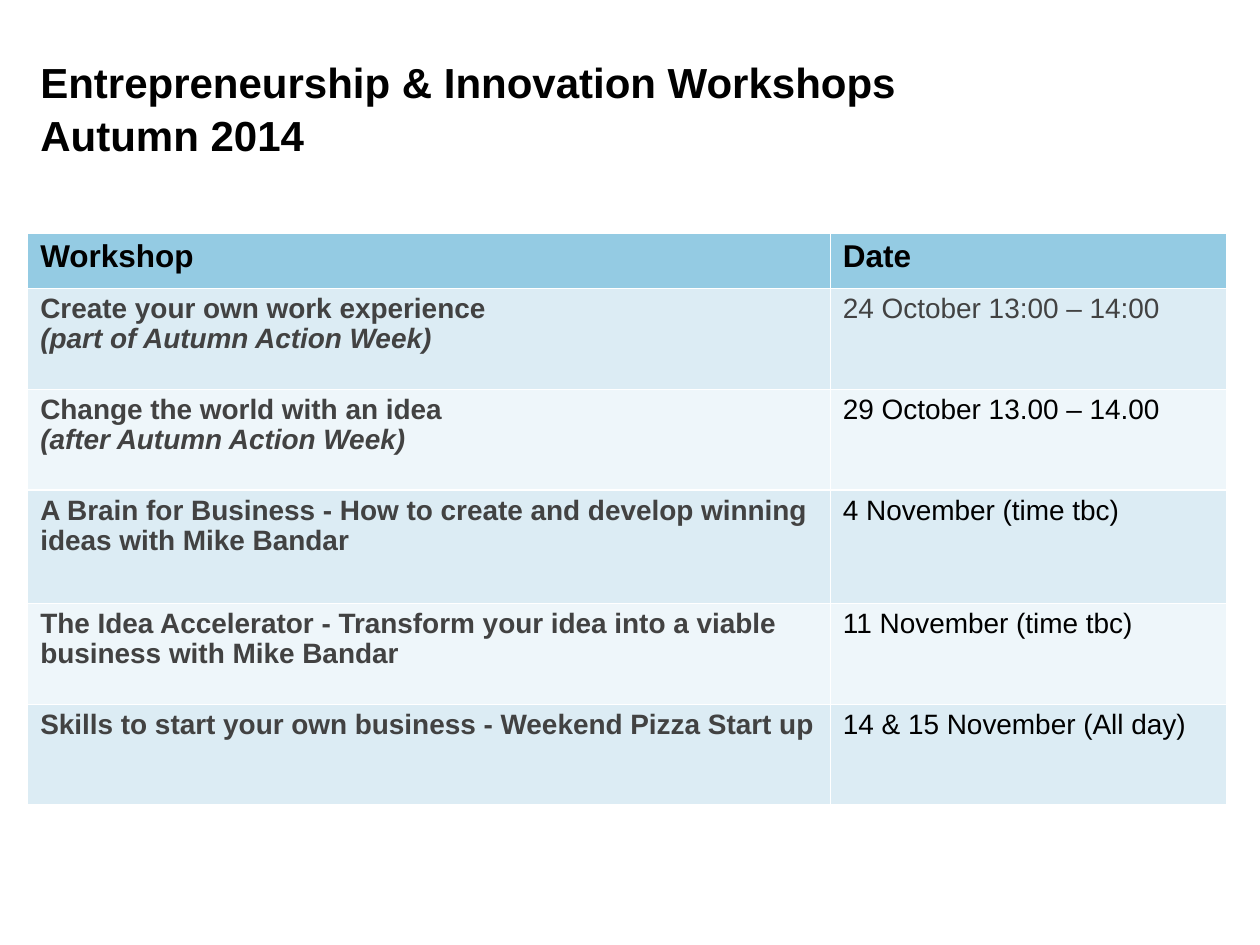
from pptx import Presentation
from pptx.dml.color import RGBColor
from pptx.enum.text import MSO_ANCHOR, MSO_AUTO_SIZE, PP_ALIGN
from pptx.util import Inches, Pt

BLACK = RGBColor(0x00, 0x00, 0x00)
GREY = RGBColor(0x42, 0x42, 0x42)
HEADER_BLUE = RGBColor(0x94, 0xCB, 0xE3)
BAND_BLUES = (RGBColor(0xDC, 0xEC, 0xF4), RGBColor(0xEE, 0xF6, 0xFA))

SLIDE_WIDTH, SLIDE_HEIGHT = Inches(10), Inches(7.5)
LEFT = Inches(0.22)
HEADING = "Entrepreneurship & Innovation Workshops\vAutumn 2014"
HEADERS = ("Workshop", "Date")
COLUMN_WIDTHS = (6.37, 3.15)
HEADER_HEIGHT = 0.44

# Title, note, date, colour of the date, row height
WORKSHOPS = (
    ("Create your own work experience", "(part of Autumn Action Week)",
     "24 October 13:00 – 14:00", GREY, 0.8),
    ("Change the world with an idea", "(after Autumn Action Week)",
     "29 October 13.00 – 14.00", BLACK, 0.8),
    ("A Brain for Business - How to create and develop winning ideas with Mike Bandar",
     None, "4 November (time tbc)", BLACK, 0.9),
    ("The Idea Accelerator - Transform your idea into a viable business with Mike Bandar",
     None, "11 November (time tbc)", BLACK, 0.8),
    ("Skills to start your own business - Weekend Pizza Start up",
     None, "14 & 15 November (All day)", BLACK, 0.8),
)


def write(paragraph, text, size=16, color=BLACK, bold=False, italic=False, spacing=0.96):
    paragraph.text = text
    paragraph.alignment = PP_ALIGN.LEFT
    paragraph.line_spacing = spacing
    for run in paragraph.runs:
        font = run.font
        font.name, font.size = "Arial", Pt(size)
        font.bold, font.italic = bold, italic
        font.color.rgb = color


def fill_cell(cell, color):
    cell.fill.solid()
    cell.fill.fore_color.rgb = color


def place_heading(slide, left, top, width, height):
    heading = slide.shapes.title
    heading.left, heading.top, heading.width, heading.height = left, top, width, height
    frame = heading.text_frame
    frame.word_wrap = True
    frame.auto_size = MSO_AUTO_SIZE.NONE
    frame.vertical_anchor = MSO_ANCHOR.TOP
    write(frame.paragraphs[0], HEADING, size=24, bold=True, spacing=1.05)


def place_timetable(slide, left, top):
    heights = [HEADER_HEIGHT] + [workshop[-1] for workshop in WORKSHOPS]
    table = slide.shapes.add_table(
        len(heights), len(HEADERS), left, top,
        Inches(sum(COLUMN_WIDTHS)), Inches(sum(heights))).table
    for column, width in zip(table.columns, COLUMN_WIDTHS):
        column.width = Inches(width)
    for row, height in zip(table.rows, heights):
        row.height = Inches(height)

    for cell, header in zip(table.rows[0].cells, HEADERS):
        fill_cell(cell, HEADER_BLUE)
        write(cell.text_frame.paragraphs[0], header, size=18, bold=True, spacing=1.0)

    for index, (title, note, date, date_color, _) in enumerate(WORKSHOPS):
        title_cell, date_cell = table.rows[index + 1].cells
        for cell in (title_cell, date_cell):
            fill_cell(cell, BAND_BLUES[index % 2])
        write(title_cell.text_frame.paragraphs[0], title, color=GREY, bold=True)
        if note:
            write(title_cell.text_frame.add_paragraph(), note,
                  color=GREY, bold=True, italic=True)
        write(date_cell.text_frame.paragraphs[0], date, color=date_color)


def main():
    deck = Presentation()
    deck.slide_width, deck.slide_height = SLIDE_WIDTH, SLIDE_HEIGHT
    slide = deck.slides.add_slide(deck.slide_layouts.get_by_name("Title Only"))
    place_heading(slide, LEFT, Inches(0.38), Inches(7.17), Inches(0.91))
    place_timetable(slide, LEFT, Inches(1.85))
    deck.save("out.pptx")


if __name__ == "__main__":
    main()
